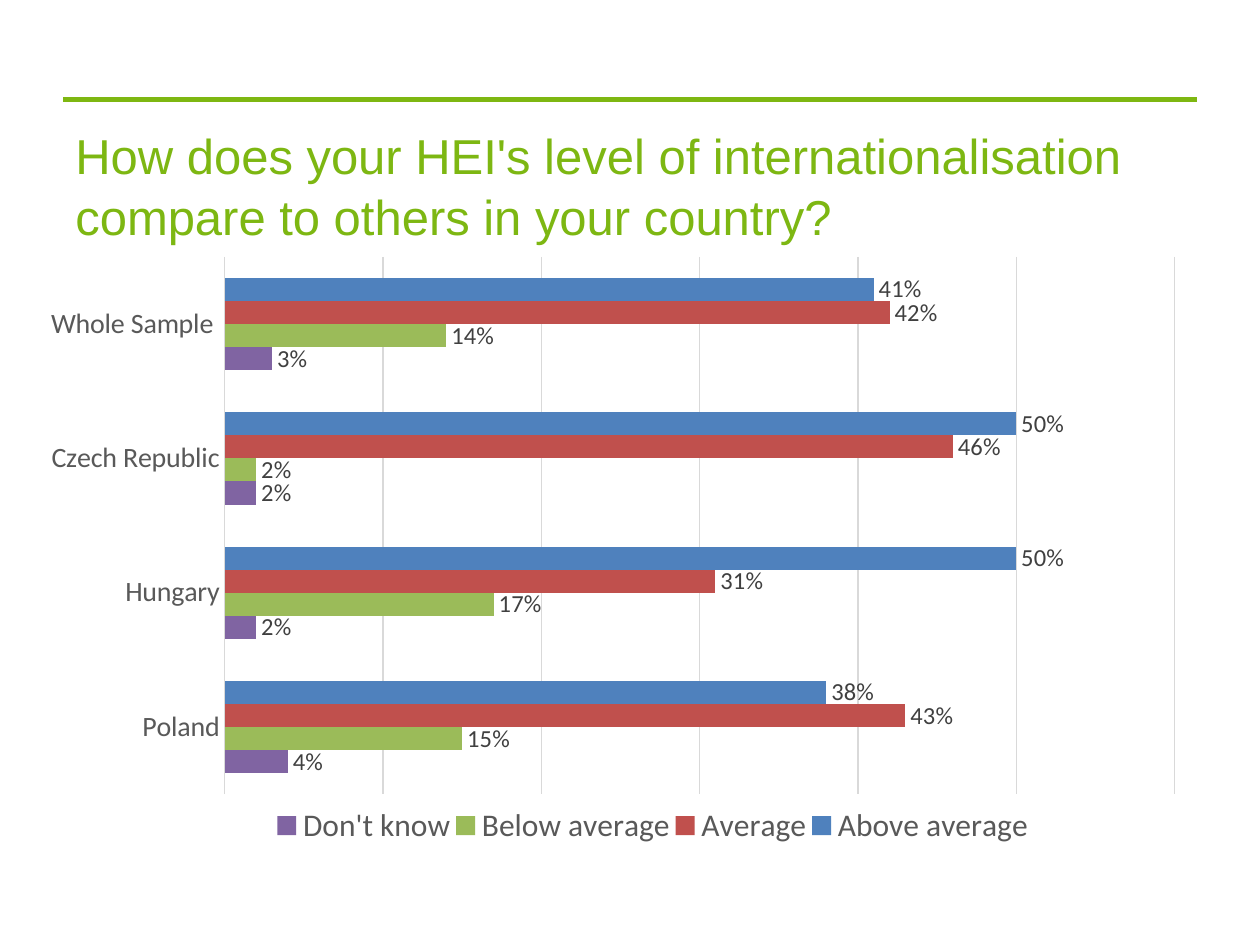
import pptx
import pptx.chart.data
import pptx.dml.color
import pptx.enum.chart
import pptx.enum.shapes
import pptx.enum.text
import pptx.oxml
import pptx.oxml.ns
import pptx.util

Inches = pptx.util.Inches
Pt = pptx.util.Pt
qn = pptx.oxml.ns.qn

GREEN = "7DB712"
RULE = "7EB711"
GREY = "595959"
PALE = "D9D9D9"
DARK = "404040"

CATS = ["Whole Sample ", "Czech Republic", "Hungary", "Poland"]
SERIES = [
    ("Above average", "4F81BD", (0.41, 0.5, 0.5, 0.38)),
    ("Average", "C0504D", (0.42, 0.46, 0.31, 0.43)),
    ("Below average", "9BBB59", (0.14, 0.02, 0.17, 0.15)),
    ("Don't know", "8064A2", (0.03, 0.02, 0.02, 0.04)),
]


def color(text):
    return pptx.dml.color.RGBColor.from_string(text)


def style(font, size, tint, face="Calibri"):
    font.size = Pt(size)
    font.name = face
    font.color.rgb = color(tint)


def stroke(line, tint, width):
    line.color.rgb = color(tint)
    line.width = Pt(width)


def add_rule(slide, left, right, top):
    rule = slide.shapes.add_connector(
        pptx.enum.shapes.MSO_CONNECTOR.STRAIGHT,
        Inches(left), Inches(top), Inches(right), Inches(top))
    stroke(rule.line, RULE, 2.75)
    props = rule._element.spPr
    props.append(props.makeelement(qn("a:effectLst"), {}))


def add_title(slide, text):
    box = slide.shapes.add_textbox(Inches(0.5), Inches(0.92), Inches(9), Inches(0.63))
    frame = box.text_frame
    frame.word_wrap = True
    frame.vertical_anchor = pptx.enum.text.MSO_ANCHOR.TOP
    para = frame.paragraphs[0]
    para.line_spacing = 1.05
    run = para.add_run()
    run.text = text
    style(run.font, 28, GREEN, "Arial")


def make_layout(left, top, width, height, inner=False):
    target = '<c:layoutTarget val="inner"/>' if inner else ""
    return pptx.oxml.parse_xml(
        f'<c:layout {pptx.oxml.ns.nsdecls("c")}><c:manualLayout>{target}'
        '<c:xMode val="edge"/><c:yMode val="edge"/>'
        f'<c:x val="{left}"/><c:y val="{top}"/>'
        f'<c:w val="{width}"/><c:h val="{height}"/>'
        '</c:manualLayout></c:layout>')


def set_layout(parent, index, layout):
    for old in parent.findall(qn("c:layout")):
        parent.remove(old)
    parent.insert(index, layout)


def style_axes(chart):
    ticks = pptx.enum.chart.XL_TICK_MARK
    cat = chart.category_axis
    cat.reverse_order = True
    cat.major_tick_mark = cat.minor_tick_mark = ticks.NONE
    style(cat.tick_labels.font, 16, GREY)
    stroke(cat.format.line, PALE, 0.75)
    val = chart.value_axis
    val.visible = False
    val.minimum_scale, val.maximum_scale, val.major_unit = 0, 0.6, 0.1
    val.tick_labels.number_format = "0%"
    val.tick_labels.number_format_is_linked = False
    val.has_major_gridlines = True
    stroke(val.major_gridlines.format.line, PALE, 0.75)


def style_bars(plot):
    plot.gap_width = 182
    plot.overlap = 0
    plot.vary_by_categories = False
    for series, (name, tint, values) in zip(plot.series, SERIES):
        series.format.fill.solid()
        series.format.fill.fore_color.rgb = color(tint)
        series.invert_if_negative = False
        labels = series.data_labels
        labels.show_value = True
        labels.number_format = "0%"
        labels.number_format_is_linked = False
        labels.position = pptx.enum.chart.XL_LABEL_POSITION.OUTSIDE_END
        style(labels.font, 14, DARK)


def style_legend(chart):
    chart.has_legend = True
    legend = chart.legend
    legend.position = pptx.enum.chart.XL_LEGEND_POSITION.BOTTOM
    legend.include_in_layout = False
    style(legend.font, 18, GREY)
    set_layout(legend._element, 1, make_layout(0.21, 0.89, 0.65, 0.08))


def add_bars(slide):
    data = pptx.chart.data.CategoryChartData(number_format="0%")
    data.categories = CATS
    for name, tint, values in SERIES:
        data.add_series(name, values)
    chart = slide.shapes.add_chart(
        pptx.enum.chart.XL_CHART_TYPE.BAR_CLUSTERED,
        Inches(0.2), Inches(1.94), Inches(9.31), Inches(4.96), data).chart
    chart.has_title = False
    style(chart.font, 10, "000000")
    style_axes(chart)
    style_bars(chart.plots[0])
    style_legend(chart)
    area = chart._chartSpace.chart.plotArea
    set_layout(area, 0, make_layout(0.17, 0.02, 0.81, 0.86, inner=True))


def main():
    deck = pptx.Presentation()
    deck.slide_width = Inches(10)
    deck.slide_height = Inches(7.5)
    slide = deck.slides.add_slide(deck.slide_layouts[6])
    add_rule(slide, 0.5, 9.5, 0.79)
    add_title(slide, "How does your HEI's level of internationalisation "
                     "compare to others in your country?")
    add_bars(slide)
    deck.save("out.pptx")


if __name__ == "__main__":
    main()
